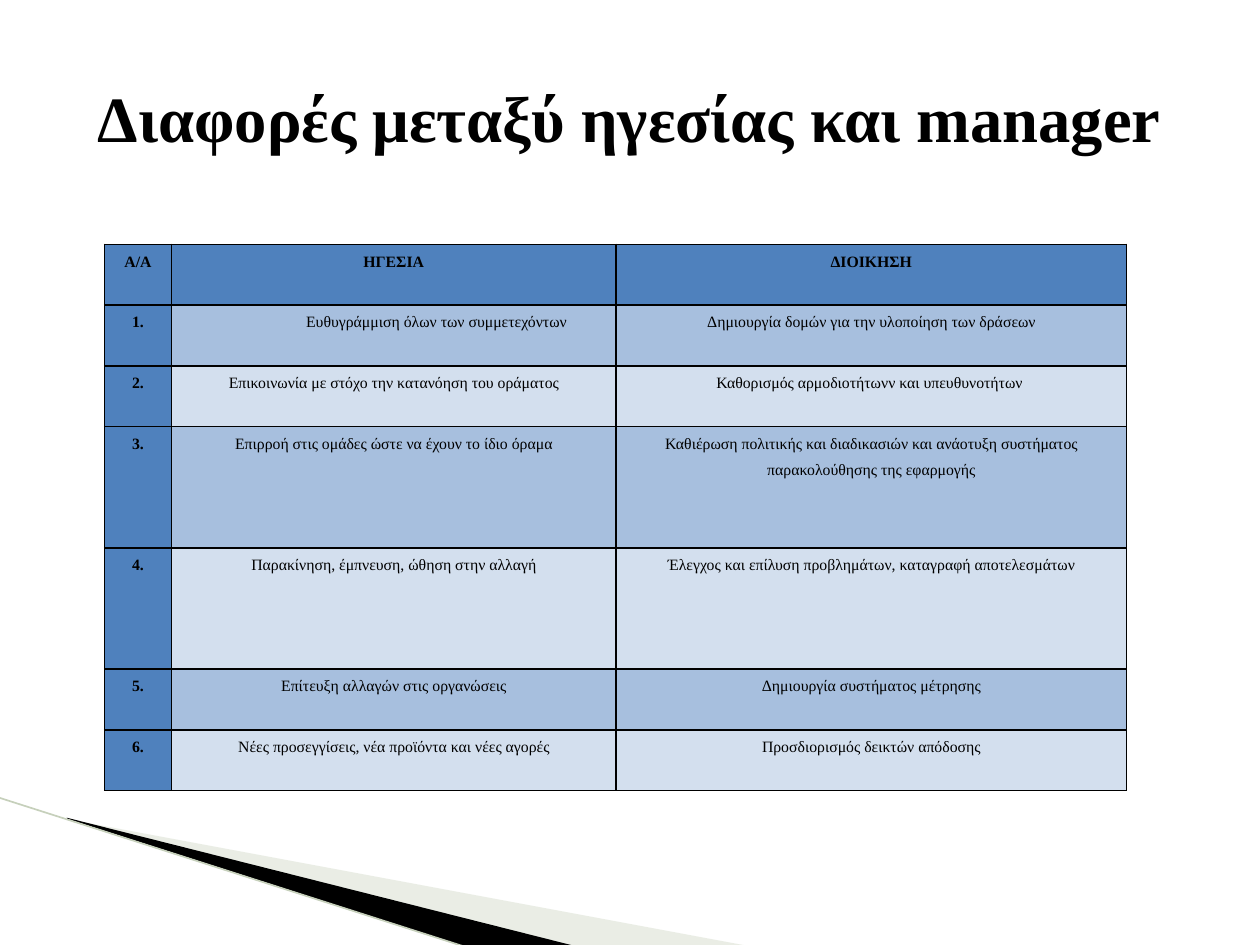
from lxml import etree
from pptx import Presentation, util as u
from pptx.dml.color import RGBColor
from pptx.enum import shapes, text
from pptx.oxml import ns

WIDTH, HEIGHT = u.Inches(10), u.Inches(7.5)
FONT = "Times New Roman"
BLACK = RGBColor(0x00, 0x00, 0x00)
SAGE = RGBColor(0xCB, 0xD4, 0xC0)
SAGE_LINE = RGBColor(0xC6, 0xD0, 0xBB)
HEADER_BLUE = RGBColor(0x4F, 0x81, 0xBD)
BANDS = RGBColor(0xA7, 0xBF, 0xDE), RGBColor(0xD3, 0xDF, 0xEE)

TITLE = "Διαφορές μεταξύ ηγεσίας και manager"
ROWS = [
    ("Α/Α", "ΗΓΕΣΙΑ", "ΔΙΟΙΚΗΣΗ"),
    ("1.", "\tΕυθυγράμμιση όλων των συμμετεχόντων",
     "Δημιουργία δομών για την υλοποίηση των δράσεων"),
    ("2.", "Επικοινωνία με στόχο την κατανόηση του οράματος",
     "Καθορισμός αρμοδιοτήτωνν και υπευθυνοτήτων "),
    ("3.", "Επιρροή στις ομάδες ώστε να έχουν το ίδιο όραμα",
     "Καθιέρωση πολιτικής και διαδικασιών και ανάοτυξη συστήματος "
     "παρακολούθησης της εφαρμογής"),
    ("4.", "Παρακίνηση, έμπνευση, ώθηση στην αλλαγή",
     "Έλεγχος και επίλυση προβλημάτων, καταγραφή αποτελεσμάτων"),
    ("5.", "Επίτευξη αλλαγών στις οργανώσεις", "Δημιουργία συστήματος μέτρησης"),
    ("6.", "Νέες προσεγγίσεις, νέα προϊόντα και νέες αγορές",
     "Προσδιορισμός δεικτών απόδοσης"),
]
COLUMN_SHARES = 5.3, 35.3, 40.5
ROW_UNITS = 1, 1, 1, 2, 2, 1, 1
ROW_SHARE = 6.42


def across(percent):
    return u.Emu(round(WIDTH * percent / 100))


def down(percent):
    return u.Emu(round(HEIGHT * percent / 100))


def add_run(p, words, **font):
    r = p.add_run()
    r.text = words
    r.font.color.rgb = BLACK
    for name, value in {"name": FONT, **font}.items():
        setattr(r.font, name, value)


def add_wedge(s, points, color, opacity=100):
    """Draw a filled polygon from points in percent of the slide."""
    start, *rest = [(across(x), down(y)) for x, y in points]
    builder = s.shapes.build_freeform(*start)
    builder.add_line_segments(rest, close=True)
    sp = builder.convert_to_shape()
    sp.shadow.inherit = False
    sp.line.fill.background()
    sp.fill.solid()
    sp.fill.fore_color.rgb = color
    if opacity < 100:
        clr = sp.fill._xPr.find(".//" + ns.qn("a:srgbClr"))
        etree.SubElement(clr, ns.qn("a:alpha"), val=str(opacity * 1000))


def add_edge(s, start, end):
    line = s.shapes.add_connector(
        shapes.MSO_CONNECTOR.STRAIGHT,
        across(start[0]), down(start[1]), across(end[0]), down(end[1]))
    line.line.color.rgb = SAGE_LINE
    line.line.width = u.Pt(0.95)
    etree.SubElement(line._element.spPr, ns.qn("a:effectLst"))


def add_title(s):
    tf = s.shapes.add_textbox(across(5), down(4), across(90), down(16.67)).text_frame
    tf.word_wrap = True
    tf.vertical_anchor = text.MSO_ANCHOR.MIDDLE
    p = tf.paragraphs[0]
    p.alignment = text.PP_ALIGN.CENTER
    add_run(p, TITLE, size=u.Pt(36.9), bold=True)


def add_borders(cell):
    tcPr = cell._tc.get_or_add_tcPr()
    for i, side in enumerate(("lnL", "lnR", "lnT", "lnB")):
        ln = etree.Element(ns.qn("a:" + side), w=str(u.Pt(1)))
        fill = etree.SubElement(ln, ns.qn("a:solidFill"))
        etree.SubElement(fill, ns.qn("a:srgbClr"), val=str(BLACK))
        tcPr.insert(i, ln)


def fill_cell(cell, words, color, bold):
    margins = {"margin_left": 0.07, "margin_right": 0.07,
               "margin_top": 0, "margin_bottom": 0}
    for name, value in margins.items():
        setattr(cell, name, u.Inches(value))
    cell.fill.solid()
    cell.fill.fore_color.rgb = color
    add_borders(cell)
    p = cell.text_frame.paragraphs[0]
    p.line_spacing = 1.5
    if words.startswith("\t"):
        p.alignment = text.PP_ALIGN.LEFT
        tabs = etree.SubElement(p._p.get_or_add_pPr(), ns.qn("a:tabLst"))
        etree.SubElement(tabs, ns.qn("a:tab"), pos=str(u.Inches(1)), algn="l")
    else:
        p.alignment = text.PP_ALIGN.CENTER
    add_run(p, words, size=u.Pt(9), bold=bold)


def add_comparison(s):
    table = s.shapes.add_table(
        len(ROWS), len(COLUMN_SHARES), across(8.3), down(25.87),
        across(sum(COLUMN_SHARES)), down(ROW_SHARE * sum(ROW_UNITS))).table
    for column, share in zip(table.columns, COLUMN_SHARES):
        column.width = across(share)
    for row, units in zip(table.rows, ROW_UNITS):
        row.height = down(ROW_SHARE * units)
    for i, row in enumerate(ROWS):
        for j, words in enumerate(row):
            header = i == 0 or j == 0
            color = HEADER_BLUE if header else BANDS[(i - 1) % 2]
            fill_cell(table.cell(i, j), words, color, header)


def main():
    prs = Presentation()
    prs.slide_width, prs.slide_height = WIDTH, HEIGHT
    s = prs.slides.add_slide(prs.slide_layouts[6])
    add_wedge(s, [(5.5, 86.73), (59.5, 100.13), (45.6, 100.13), (5.5, 86.67)], SAGE, 40)
    add_wedge(s, [(5.3, 86.53), (45.7, 100.13), (37.2, 100.27), (5.4, 86.67)], BLACK)
    add_edge(s, (-0.1, 84.4), (37.1, 100.27))
    add_comparison(s)
    add_title(s)
    prs.save("out.pptx")


if __name__ == "__main__":
    main()
